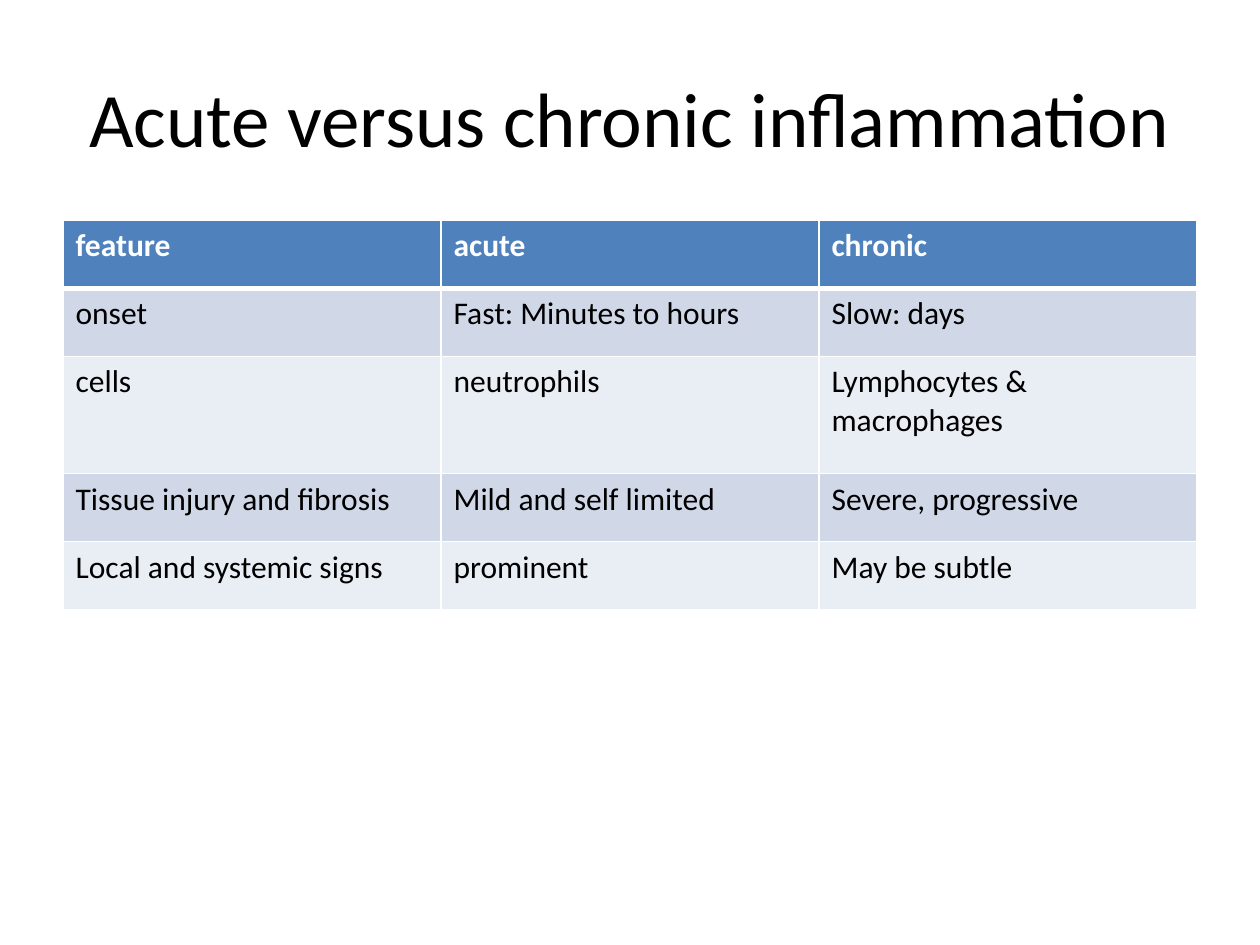
from dataclasses import dataclass

from lxml.etree import SubElement
from pptx import Presentation
from pptx.dml.color import RGBColor
from pptx.enum.text import MSO_ANCHOR, PP_ALIGN
from pptx.oxml.ns import qn
from pptx.util import Inches, Pt

TITLE = "Acute versus chronic inflammation"
ROWS = [
    ("feature", "acute", "chronic"),
    ("onset", "Fast: Minutes to hours", "Slow: days"),
    ("cells", "neutrophils", "Lymphocytes & macrophages"),
    ("Tissue injury and fibrosis", "Mild and self limited", "Severe, progressive"),
    ("Local and systemic signs", "prominent", "May be subtle"),
]
ROW_HEIGHT = 0.54
TALL_ROWS = {2: 0.93}
LEFT, WIDTH = 0.5, 9


@dataclass(frozen=True)
class Theme:
    font: str = "Calibri"
    title_size: int = 44
    cell_size: int = 18
    text: str = "000000"
    header_text: str = "FFFFFF"
    header_fill: str = "4F81BD"
    bands: tuple = ("D0D8E8", "E9EDF4")
    border: str = "FFFFFF"
    thin: int = 1
    thick: int = 3


THEME = Theme()


def add_span(para, text, size, color, bold=False):
    span = para.add_run()
    span.text = text
    span.font.name = THEME.font
    span.font.size = Pt(size)
    span.font.bold = bold
    span.font.color.rgb = RGBColor.from_string(color)


def add_borders(cell, top, bottom):
    """Draw the four cell borders; they must precede the cell's fill."""
    widths = {"L": THEME.thin, "R": THEME.thin, "T": top, "B": bottom}
    properties = cell._tc.get_or_add_tcPr()
    for side, width in widths.items():
        line = SubElement(properties, qn(f"a:ln{side}"), w=str(Pt(width)))
        fill = SubElement(line, qn("a:solidFill"))
        SubElement(fill, qn("a:srgbClr"), val=THEME.border)


def add_title(page):
    box = page.shapes.title
    box.left, box.top = Inches(LEFT), Inches(0.3)
    box.width, box.height = Inches(WIDTH), Inches(1.25)
    box.text_frame.vertical_anchor = MSO_ANCHOR.MIDDLE
    para = box.text_frame.paragraphs[0]
    para.alignment = PP_ALIGN.CENTER
    add_span(para, TITLE, THEME.title_size, THEME.text)


def add_comparison(page):
    heights = [TALL_ROWS.get(i, ROW_HEIGHT) for i in range(len(ROWS))]
    table = page.shapes.add_table(
        len(ROWS), len(ROWS[0]), Inches(LEFT), Inches(1.75),
        Inches(WIDTH), Inches(sum(heights))).table
    for i, texts in enumerate(ROWS):
        table.rows[i].height = Inches(heights[i])
        header = i == 0
        fill = THEME.header_fill if header else THEME.bands[(i - 1) % 2]
        color = THEME.header_text if header else THEME.text
        top = THEME.thick if i == 1 else THEME.thin
        bottom = THEME.thick if header else THEME.thin
        for j, text in enumerate(texts):
            cell = table.cell(i, j)
            add_borders(cell, top, bottom)
            cell.fill.solid()
            cell.fill.fore_color.rgb = RGBColor.from_string(fill)
            add_span(cell.text_frame.paragraphs[0], text,
                     THEME.cell_size, color, bold=header)


def main():
    deck = Presentation()
    deck.slide_width, deck.slide_height = Inches(10), Inches(7.5)
    page = deck.slides.add_slide(deck.slide_layouts[5])
    add_title(page)
    add_comparison(page)
    deck.save("out.pptx")


if __name__ == "__main__":
    main()
